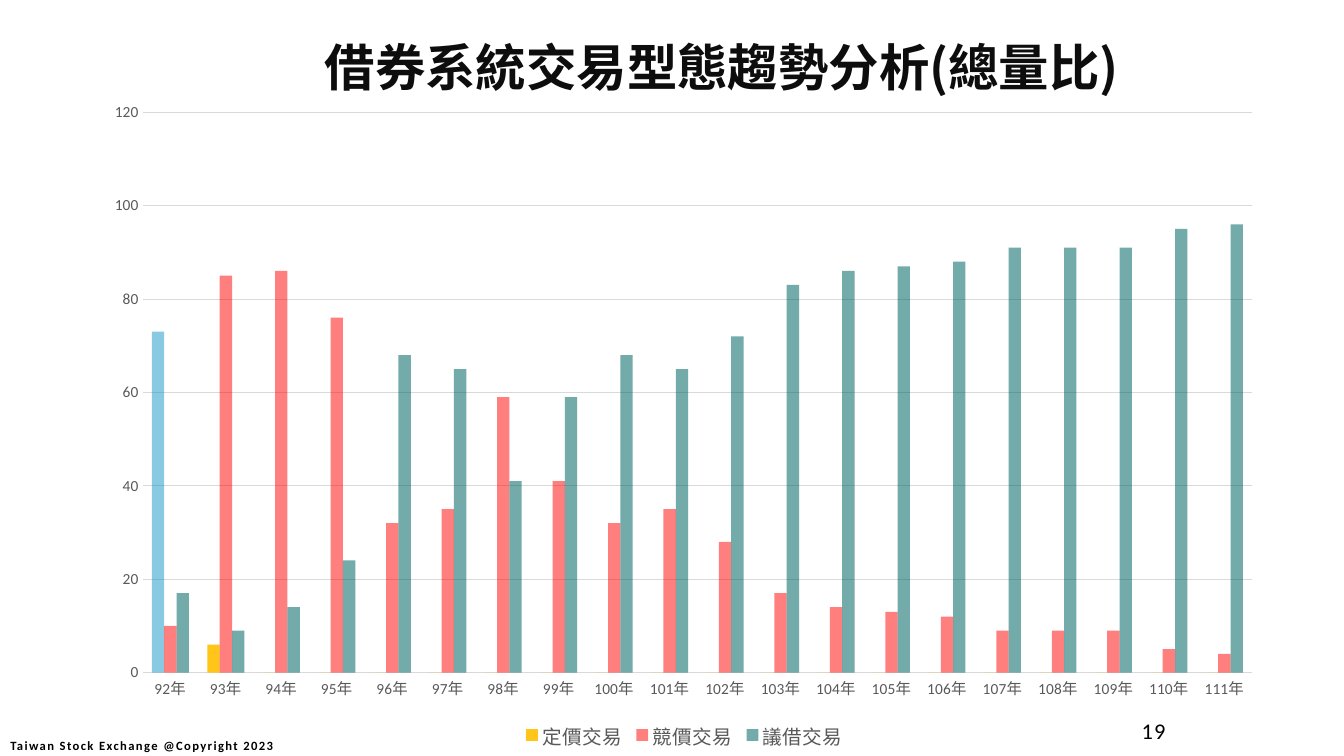
from lxml import etree
from pptx import Presentation
from pptx.chart.data import CategoryChartData
from pptx.dml.color import RGBColor
from pptx.enum import chart as charts, text
from pptx.oxml import parse_xml
from pptx.oxml.ns import nsdecls, qn
from pptx.util import Pt

COLORS = {"ink": "000000", "title": "0D0D0D", "label": "595959", "grid": "D9D9D9",
          "fixed": "FFC000", "first_year": "1594C6", "bid": "FF0000", "negotiated": "006666"}
YEARS = [f"{year}年" for year in range(92, 112)]
# name, colour, opacity in percent, share of total volume per year
TRADES = [
    ("定價交易", "fixed", 90, [73, 6] + [0] * 18),
    ("競價交易", "bid", 50, [10, 85, 86, 76, 32, 35, 59, 41, 32, 35,
                         28, 17, 14, 13, 12, 9, 9, 9, 5, 4]),
    ("議借交易", "negotiated", 55, [17, 9, 14, 24, 68, 65, 41, 59, 68, 65,
                                72, 83, 86, 87, 88, 91, 91, 91, 95, 96]),
]


def rgb(name):
    return RGBColor.from_string(COLORS[name])


def tint(fill_format, color, opacity):
    """Fill a chart part with a partly transparent colour."""
    fill_format.fill.solid()
    fill_format.fill.fore_color.rgb = rgb(color)
    clr = fill_format._element.find(".//" + qn("a:srgbClr"))
    etree.SubElement(clr, qn("a:alpha"), val=str(opacity * 1000))


def manual_layout(x, y, w, h, inner=False):
    """Layout element with fractions of the chart area."""
    target = '<c:layoutTarget val="inner"/>' if inner else ""
    return parse_xml(
        f'<c:layout {nsdecls("c")}><c:manualLayout>{target}'
        '<c:xMode val="edge"/><c:yMode val="edge"/>'
        f'<c:x val="{x}"/><c:y val="{y}"/><c:w val="{w}"/><c:h val="{h}"/>'
        '</c:manualLayout></c:layout>')


class SlideBuilder:
    font = "Calibri"

    def __init__(self, prs):
        self.slide = prs.slides.add_slide(prs.slide_layouts[6])

    def style(self, font, size, color):
        font.name, font.size = self.font, Pt(size)
        font.color.rgb = rgb(color)

    def label(self, words, box, size, color="ink", align="CENTER", anchor="MIDDLE",
              bold=False, face=None, spacing=0, line_spacing=None):
        frame = self.slide.shapes.add_textbox(*map(Pt, box)).text_frame
        frame.word_wrap = True
        frame.vertical_anchor = text.MSO_ANCHOR[anchor]
        frame.text = words
        paragraph = frame.paragraphs[0]
        paragraph.alignment = text.PP_ALIGN[align]
        paragraph.line_spacing = line_spacing
        run = paragraph.runs[0]
        self.style(run.font, size, color)
        run.font.bold = bold
        props = run.font._element
        if spacing:
            props.set("spc", str(spacing * 100))
        if face:
            run.font.name = face
            etree.SubElement(props, qn("a:ea"), typeface=face)

    def column_chart(self, box, categories, series):
        data = CategoryChartData()
        data.categories = categories
        for name, _, _, values in series:
            data.add_series(name, values)
        chart = self.slide.shapes.add_chart(
            charts.XL_CHART_TYPE.COLUMN_CLUSTERED, *map(Pt, box), data).chart
        self.style(chart.font, 10, "ink")
        chart.has_title = False

        plot = chart.plots[0]
        plot.gap_width, plot.overlap, plot.vary_by_categories = 150, 0, False
        for columns, (_, color, opacity, _) in zip(plot.series, series):
            columns.invert_if_negative = False
            tint(columns.format, color, opacity)

        for axis in (chart.category_axis, chart.value_axis):
            axis.major_tick_mark = axis.minor_tick_mark = charts.XL_TICK_MARK.NONE
            axis.format.line.fill.background()
            self.style(axis.tick_labels.font, 11, "label")
        scale = chart.value_axis
        scale.minimum_scale, scale.maximum_scale, scale.major_unit = 0, 120, 20
        gridline = scale.major_gridlines.format.line
        gridline.width = Pt(0.75)
        gridline.color.rgb = rgb("grid")

        chart.has_legend = True
        legend = chart.legend
        legend.position = charts.XL_LEGEND_POSITION.BOTTOM
        legend.include_in_layout = False
        self.style(legend.font, 14, "label")

        area = chart._chartSpace.chart.plotArea
        for old in area.findall(qn("c:layout")):
            area.remove(old)
        area.insert(0, manual_layout(0.043, 0.034, 0.936, 0.841, inner=True))
        legend._element.find(qn("c:legendPos")).addnext(
            manual_layout(0.36, 0.95, 0.28, 0.05))
        return chart


def main():
    prs = Presentation()
    prs.slide_width, prs.slide_height = Pt(960), Pt(540)
    page = SlideBuilder(prs)
    page.label("Taiwan Stock Exchange @Copyright 2023", (-10, 518.4, 222.5, 28.8), 9,
               bold=True, spacing=1)
    page.label("19", (689.8, 504, 149.8, 36), 16, align="RIGHT", spacing=1)
    page.label("借券系統交易型態趨勢分析(總量比)", (119.5, 13.7, 792, 79.2), 36, "title",
               anchor="TOP", bold=True, face="Noto Sans CJK SC", line_spacing=1.2)
    trend = page.column_chart((65.5, 64, 846.7, 476), YEARS, TRADES)
    tint(trend.plots[0].series[0].points[0].format, "first_year", 50)
    prs.save("out.pptx")


if __name__ == "__main__":
    main()
